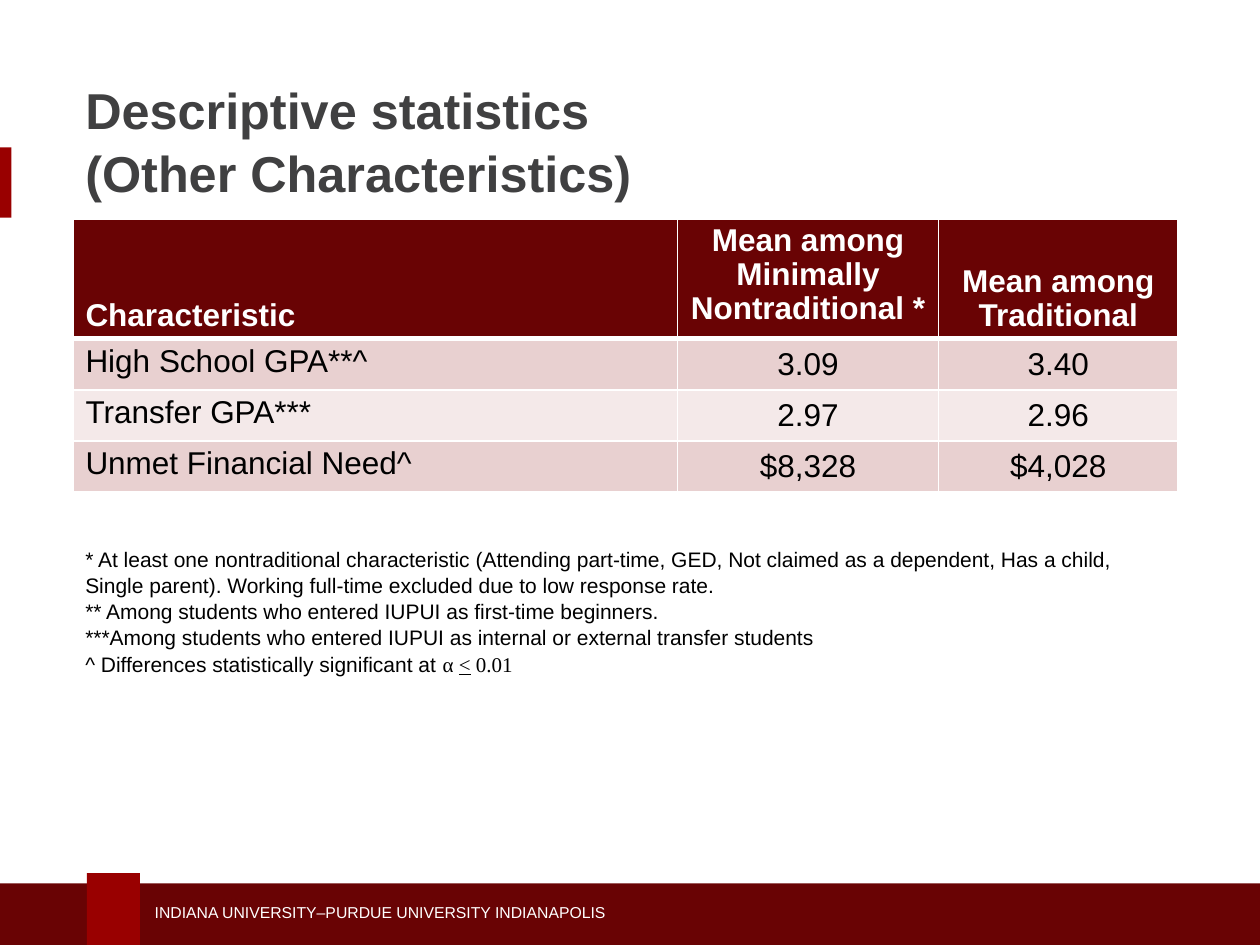
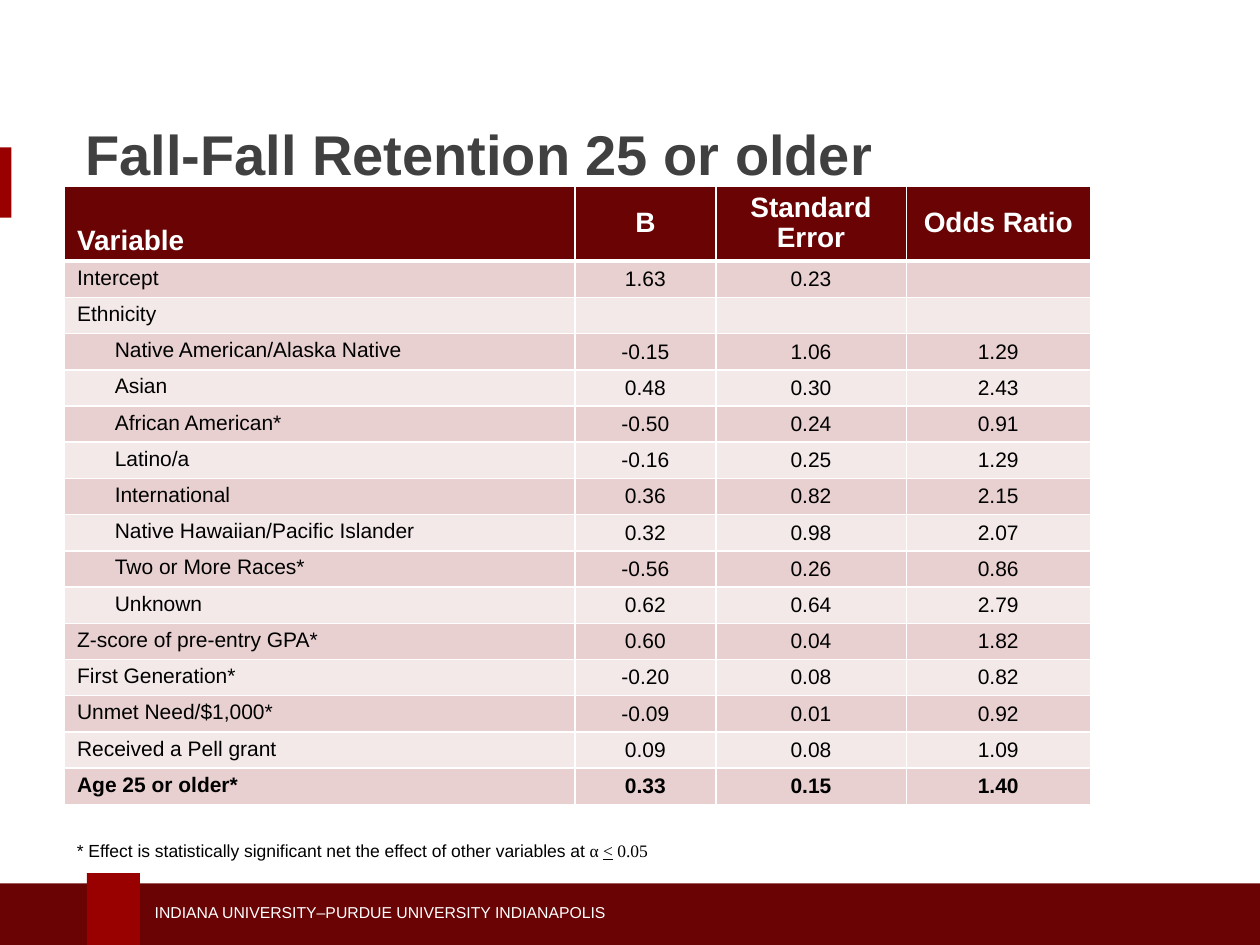
from dataclasses import dataclass
from typing import NamedTuple

from pptx import Presentation
from pptx.dml.color import RGBColor
from pptx.enum.shapes import MSO_SHAPE
from pptx.enum.text import MSO_ANCHOR as Anchor, PP_ALIGN as Align
from pptx.oxml.ns import qn
from pptx.util import Cm, Pt
from lxml.etree import SubElement

COLORS = {
    "maroon": "690304",
    "crimson": "990000",
    "title": "404041",
    "text": "000000",
    "white": "FFFFFF",
    "odd_row": "E8D0D0",
    "even_row": "F4E9E9",
}
SANS, SERIF = "Arial", "Times New Roman"
FOOTER = "INDIANA UNIVERSITY–PURDUE UNIVERSITY INDIANAPOLIS"
SLIDE_WIDTH, SLIDE_HEIGHT = 25.4, 19.05
LABEL_INDENT = 0.76
THIN_RULE, HEADER_RULE = 1, 3


class Box(NamedTuple):
    left: float
    top: float
    width: float
    height: float

    def lengths(self) -> list:
        return [Cm(value) for value in self]


class Band(NamedTuple):
    box: Box
    color: str


class Piece(NamedTuple):
    text: str
    font: str = SANS
    underline: bool = False


class Heading(NamedTuple):
    text: str
    width: float
    anchor: Anchor


class Row(NamedTuple):
    label: str
    values: tuple
    indented: bool = False
    bold: bool = False


@dataclass
class StatTable:
    left: float
    top: float
    headings: list
    rows: list
    header_height: float
    row_height: float
    header_size: float
    body_size: float


@dataclass
class StatSlide:
    title: list
    title_top: float
    title_size: float
    table: StatTable
    remarks: list
    remark_box: Box
    remark_size: float


BANDS = [
    Band(Box(0, 2.97, 0.23, 1.42), "crimson"),
    Band(Box(0, 17.81, SLIDE_WIDTH, 1.24), "maroon"),
    Band(Box(1.75, 17.6, 1.07, 1.45), "crimson"),
]


def significance(lead: str, level: str) -> list:
    """Remark that ends with the alpha level in the serif font."""
    return [Piece(lead), Piece("α ", SERIF), Piece("<", SERIF, True), Piece(f" {level}", SERIF)]


DESCRIPTIVES = StatSlide(
    title=["Descriptive statistics", "(Other Characteristics)"],
    title_top=1.93,
    title_size=28.8,
    table=StatTable(
        1.47, 4.41,
        headings=[
            Heading("Characteristic", 12.19, Anchor.BOTTOM),
            Heading("Mean among Minimally Nontraditional *", 5.26, Anchor.TOP),
            Heading("Mean among Traditional", 4.83, Anchor.BOTTOM),
        ],
        rows=[
            Row("High School GPA**^", ("3.09", "3.40")),
            Row("Transfer GPA***", ("2.97", "2.96")),
            Row("Unmet Financial Need^", ("$8,328", "$4,028")),
        ],
        header_height=2.37, row_height=1.03, header_size=18, body_size=18,
    ),
    remarks=[
        [Piece("* At least one nontraditional characteristic (Attending part-time, GED, "
               "Not claimed as a dependent, Has a child, Single parent). "
               "Working full-time excluded due to low response rate.")],
        [Piece("** Among students who entered IUPUI as first-time beginners.")],
        [Piece("***Among students who entered IUPUI as internal or external transfer students")],
        significance("^ Differences statistically significant at ", "0.01"),
    ],
    remark_box=Box(1.47, 10.87, 21.29, 3.33),
    remark_size=12,
)

RETENTION = StatSlide(
    title=["Fall-Fall Retention 25 or older"],
    title_top=2.16,
    title_size=32,
    table=StatTable(
        1.3, 3.75,
        headings=[
            Heading("Variable", 10.29, Anchor.BOTTOM),
            Heading("B", 2.84, Anchor.MIDDLE),
            Heading("Standard Error", 3.84, Anchor.MIDDLE),
            Heading("Odds Ratio", 3.71, Anchor.MIDDLE),
        ],
        rows=[
            Row("Intercept", ("1.63", "0.23", "")),
            Row("Ethnicity", ("", "", "")),
            Row("Native American/Alaska Native", ("-0.15", "1.06", "1.29"), indented=True),
            Row("Asian", ("0.48", "0.30", "2.43"), indented=True),
            Row("African American*", ("-0.50", "0.24", "0.91"), indented=True),
            Row("Latino/a", ("-0.16", "0.25", "1.29"), indented=True),
            Row("International", ("0.36", "0.82", "2.15"), indented=True),
            Row("Native Hawaiian/Pacific Islander", ("0.32", "0.98", "2.07"), indented=True),
            Row("Two or More Races*", ("-0.56", "0.26", "0.86"), indented=True),
            Row("Unknown", ("0.62", "0.64", "2.79"), indented=True),
            Row("Z-score of pre-entry GPA*", ("0.60", "0.04", "1.82")),
            Row("First Generation*", ("-0.20", "0.08", "0.82")),
            Row("Unmet Need/$1,000*", ("-0.09", "0.01", "0.92")),
            Row("Received a Pell grant", ("0.09", "0.08", "1.09")),
            Row("Age 25 or older*", ("0.33", "0.15", "1.40"), bold=True),
        ],
        header_height=1.5, row_height=0.73, header_size=16, body_size=12,
    ),
    remarks=[significance(
        "* Effect is statistically significant net the effect of other variables at ", "0.05")],
    remark_box=Box(1.3, 16.79, 20.12, 0.69),
    remark_size=10,
)


def rgb(color: str) -> RGBColor:
    return RGBColor.from_string(COLORS[color])


def add_run(paragraph, piece: Piece, size: float, color: str, bold: bool = False) -> None:
    run = paragraph.add_run()
    run.text = piece.text
    font = run.font
    font.name, font.size, font.bold = piece.font, Pt(size), bold
    font.underline = piece.underline
    font.color.rgb = rgb(color)


def add_text_frame(slide, box: Box, anchor: Anchor):
    frame = slide.shapes.add_textbox(*box.lengths()).text_frame
    frame.word_wrap = True
    frame.vertical_anchor = anchor
    return frame


def draw_bands(slide) -> None:
    for band in BANDS:
        bar = slide.shapes.add_shape(MSO_SHAPE.RECTANGLE, *band.box.lengths())
        bar.shadow.inherit = False
        bar.fill.solid()
        bar.fill.fore_color.rgb = rgb(band.color)
        bar.line.fill.background()
    footer = add_text_frame(slide, Box(2.87, 18.06, 10.03, 0.64), Anchor.MIDDLE)
    add_run(footer.paragraphs[0], Piece(FOOTER), 9, "white")


def draw_title(slide, page: StatSlide) -> None:
    frame = add_text_frame(slide, Box(1.47, page.title_top, 22.23, 1.78), Anchor.MIDDLE)
    heading = frame.paragraphs[0]
    heading.line_spacing = 1.04
    for index, line in enumerate(page.title):
        if index:
            heading.add_line_break()
        add_run(heading, Piece(line), page.title_size, "title", bold=True)


def draw_remarks(slide, page: StatSlide) -> None:
    frame = add_text_frame(slide, page.remark_box, Anchor.TOP)
    for index, remark in enumerate(page.remarks):
        paragraph = frame.add_paragraph() if index else frame.paragraphs[0]
        paragraph.line_spacing = 1.04
        for piece in remark:
            add_run(paragraph, piece, page.remark_size, "text")


def style_cell(cell, fill: str, anchor: Anchor, top_rule: float, bottom_rule: float) -> None:
    cell.margin_top = cell.margin_bottom = Cm(0.1)
    cell.vertical_anchor = anchor
    properties = cell._tc.get_or_add_tcPr()
    rules = {"L": THIN_RULE, "R": THIN_RULE, "T": top_rule, "B": bottom_rule}
    for side, width in rules.items():
        rule = SubElement(properties, qn(f"a:ln{side}"), w=str(Pt(width)))
        paint = SubElement(rule, qn("a:solidFill"))
        SubElement(paint, qn("a:srgbClr"), val=COLORS["white"])
    cell.fill.solid()
    cell.fill.fore_color.rgb = rgb(fill)


def fill_cell(cell, text: str, column: int, size: float, color: str, bold: bool) -> None:
    paragraph = cell.text_frame.paragraphs[0]
    paragraph.alignment = Align.CENTER if column else Align.LEFT
    if text:
        add_run(paragraph, Piece(text), size, color, bold)
    else:  # an empty cell still needs its text size, or the row grows
        SubElement(paragraph._p, qn("a:endParaRPr"), sz=str(size * 100))


def draw_table(slide, stats: StatTable) -> None:
    widths = [heading.width for heading in stats.headings]
    heights = [stats.header_height] + [stats.row_height] * len(stats.rows)
    box = Box(stats.left, stats.top, sum(widths), sum(heights))
    grid = slide.shapes.add_table(len(heights), len(widths), *box.lengths()).table
    for column, width in zip(grid.columns, widths):
        column.width = Cm(width)
    for grid_row, height in zip(grid.rows, heights):
        grid_row.height = Cm(height)

    for column, heading in enumerate(stats.headings):
        cell = grid.cell(0, column)
        style_cell(cell, "maroon", heading.anchor, THIN_RULE, HEADER_RULE)
        fill_cell(cell, heading.text, column, stats.header_size, "white", True)
        cell.text_frame.paragraphs[0].line_spacing = 0.97

    for number, row in enumerate(stats.rows, start=1):
        fill = "odd_row" if number % 2 else "even_row"
        top_rule = HEADER_RULE if number == 1 else THIN_RULE
        for column, text in enumerate((row.label, *row.values)):
            cell = grid.cell(number, column)
            anchor = Anchor.MIDDLE if column else Anchor.TOP
            style_cell(cell, fill, anchor, top_rule, THIN_RULE)
            fill_cell(cell, text, column, stats.body_size, "text", row.bold)
        if row.indented:
            label = grid.cell(number, 0).text_frame.paragraphs[0]
            label._p.get_or_add_pPr().set("marL", str(Cm(LABEL_INDENT)))


def main() -> None:
    deck = Presentation()
    deck.slide_width, deck.slide_height = Cm(SLIDE_WIDTH), Cm(SLIDE_HEIGHT)
    for page in (DESCRIPTIVES, RETENTION):
        slide = deck.slides.add_slide(deck.slide_layouts[6])
        draw_bands(slide)
        draw_title(slide, page)
        draw_table(slide, page.table)
        draw_remarks(slide, page)
    deck.save("out.pptx")


if __name__ == "__main__":
    main()
